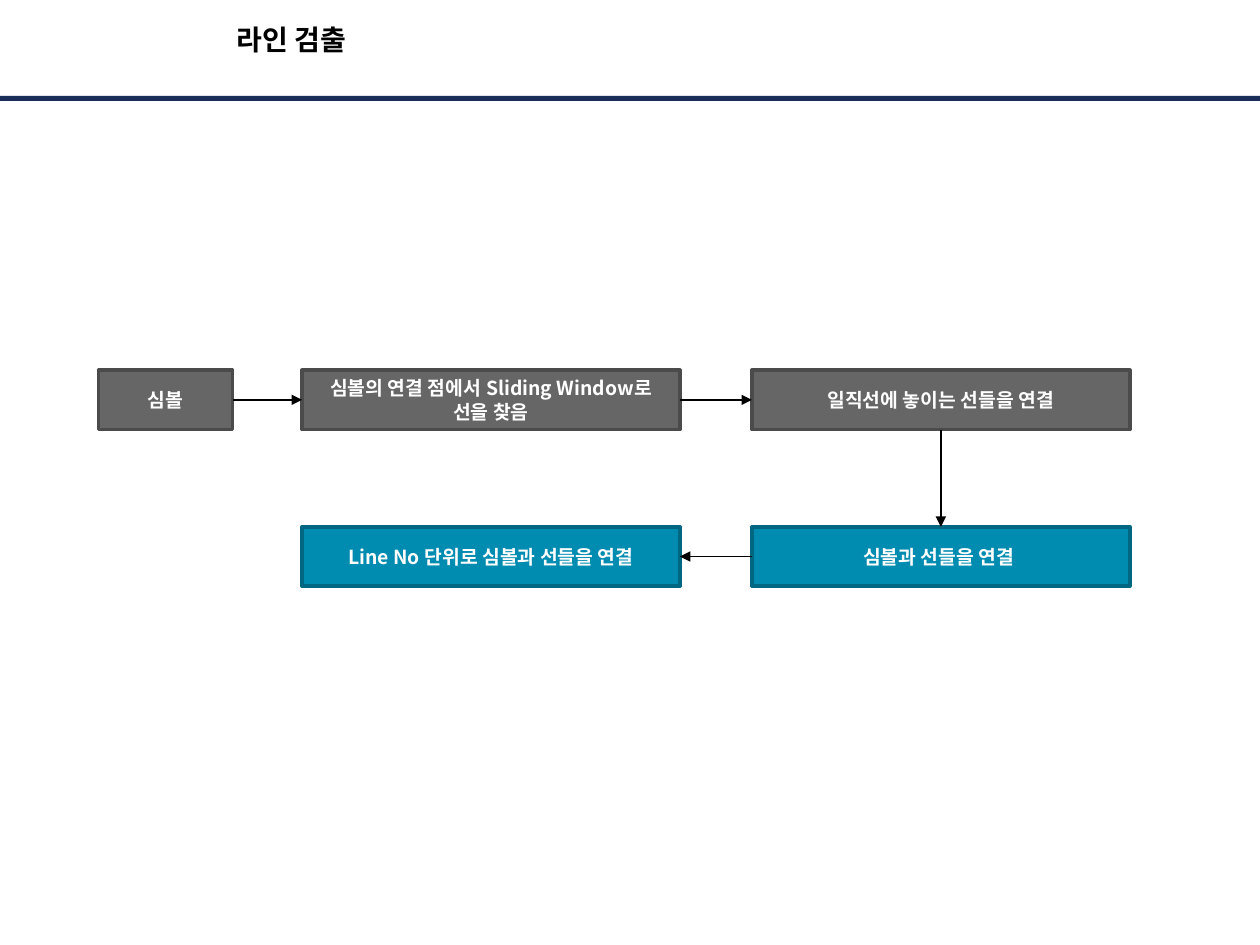
from lxml.etree import SubElement
from pptx import Presentation
from pptx.dml.color import RGBColor
from pptx.enum.shapes import MSO_CONNECTOR, MSO_SHAPE
from pptx.enum.text import MSO_ANCHOR, PP_ALIGN
from pptx.oxml.ns import qn
from pptx.util import Emu, Pt

EMU_PER_PX = 9144  # 100 px to the inch
BOX_HEIGHT = 47
WIDE = 299
COLUMNS = (78, 239, 595)
ROWS = (293, 417)
GRAY = ("666666", "4B4B4B")
TEAL = ("008BB0", "006782")
TOP, LEFT, BOTTOM, RIGHT = range(4)


def px(length):
    return Emu(length * EMU_PER_PX)


def color(value):
    return RGBColor.from_string(value)


def write_text(shape, text, font_name, size, font_color):
    """Fill a shape with one centred bold paragraph, without pair kerning."""
    shape.text_frame.text = text
    paragraph = shape.text_frame.paragraphs[0]
    paragraph.alignment = PP_ALIGN.CENTER
    for run in paragraph.runs:
        run.font.name = font_name
        run.font.size = Pt(size)
        run.font.bold = True
        run.font.color.rgb = color(font_color)
        run.font._element.set("kern", "0")
        SubElement(run.font._element, qn("a:ea"), typeface="Noto Sans CJK KR")


def add_rectangle(slide, left, top, width, height, fill):
    shape = slide.shapes.add_shape(
        MSO_SHAPE.RECTANGLE, px(left), px(top), px(width), px(height))
    shape.shadow.inherit = False
    shape.fill.solid()
    shape.fill.fore_color.rgb = color(fill)
    shape.line.fill.background()
    return shape


def add_title(slide, text):
    title = slide.shapes.add_textbox(px(13), px(13), px(435), px(47))
    title.text_frame.word_wrap = True
    write_text(title, text, "Arial", 16, "000000")


def add_step(slide, left, top, width, text, palette):
    fill, border = palette
    step = add_rectangle(slide, left, top, width, BOX_HEIGHT, fill)
    step.line.color.rgb = color(border)
    step.line.width = Pt(2)
    step.text_frame.word_wrap = False
    step.text_frame.vertical_anchor = MSO_ANCHOR.MIDDLE
    write_text(step, text, "Noto Sans CJK KR", 11, "FFFFFF")
    return step


def add_arrow(slide, source, source_side, target, target_side):
    arrow = slide.shapes.add_connector(MSO_CONNECTOR.STRAIGHT, 0, 0, 0, 0)
    arrow.begin_connect(source, source_side)
    arrow.end_connect(target, target_side)
    arrow.line.color.rgb = color("000000")
    arrow.line.width = Pt(0.75)
    SubElement(arrow.line._get_or_add_ln(), qn("a:tailEnd"), type="triangle")
    SubElement(arrow._element.spPr, qn("a:effectLst"))


def main():
    presentation = Presentation()
    presentation.slide_width = px(997)
    presentation.slide_height = px(748)
    slide = presentation.slides.add_slide(presentation.slide_layouts[6])

    add_rectangle(slide, 0, 76, 997, 4, "1B2E5A")
    add_title(slide, "라인 검출")

    first, middle, last = COLUMNS
    upper, lower = ROWS
    symbol = add_step(slide, first, upper, 106, "심볼", GRAY)
    find_lines = add_step(slide, middle, upper, WIDE,
                          "심볼의 연결 점에서 Sliding Window로\v선을 찾음", GRAY)
    join_lines = add_step(slide, last, upper, WIDE, "일직선에 놓이는 선들을 연결", GRAY)
    join_symbols = add_step(slide, last, lower, WIDE, "심볼과 선들을 연결 ", TEAL)
    group_by_line = add_step(slide, middle, lower, WIDE,
                             "Line No 단위로 심볼과 선들을 연결", TEAL)

    add_arrow(slide, symbol, RIGHT, find_lines, LEFT)
    add_arrow(slide, find_lines, RIGHT, join_lines, LEFT)
    add_arrow(slide, join_lines, BOTTOM, join_symbols, TOP)
    add_arrow(slide, join_symbols, LEFT, group_by_line, RIGHT)

    presentation.save("out.pptx")


if __name__ == "__main__":
    main()
